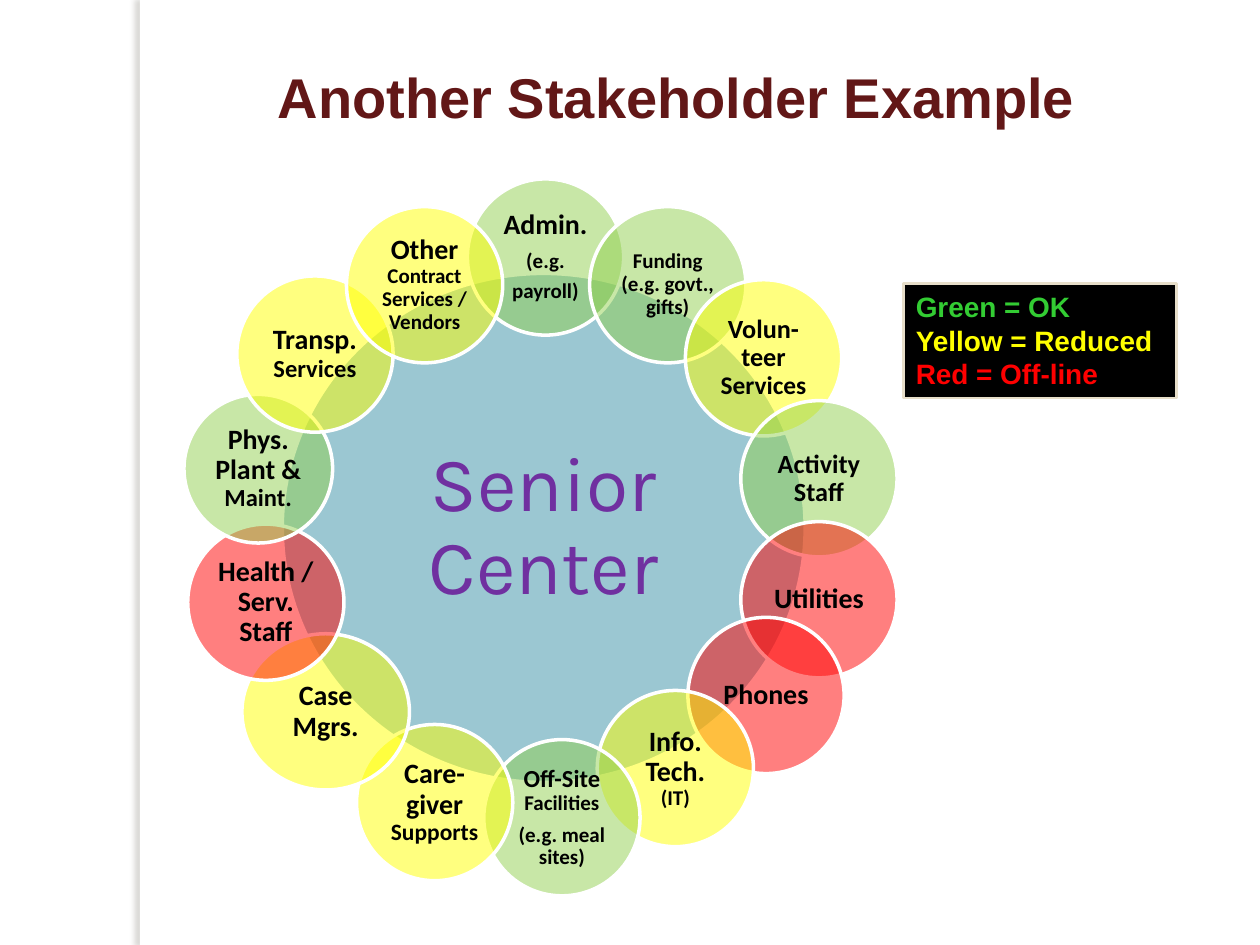
from lxml.etree import SubElement
from pptx import Presentation
from pptx.dml.color import RGBColor
from pptx.enum.shapes import MSO_SHAPE
from pptx.enum.text import MSO_ANCHOR, PP_ALIGN
from pptx.oxml.ns import qn
from pptx.util import Inches, Pt

CELL = Inches(0.1)  # the page is a grid of 100 columns by 75 rows
GREEN, YELLOW, RED = "92D050", "FFFF00", "FF0000"
BREAK = ("\v", 0)


def color(value):
    return RGBColor.from_string(value)


def add_box(kind, left, top, width, height, fill, line=None, line_width=2, opacity=100):
    box = page.shapes.add_shape(kind, *(round(n * CELL) for n in (left, top, width, height)))
    box.shadow.inherit = False
    box.fill.solid()
    box.fill.fore_color.rgb = color(fill)
    if opacity < 100:
        tint = box.fill._xPr.find(qn("a:solidFill"))[0]
        SubElement(tint, qn("a:alpha"), val=str(opacity * 1000))
    if line:
        box.line.color.rgb = color(line)
        box.line.width = Pt(line_width)
    else:
        box.line.fill.background()
    box.text_frame.word_wrap = True
    return box


deck = Presentation()
deck.slide_width, deck.slide_height = 100 * CELL, 75 * CELL
page = deck.slides.add_slide(deck.slide_layouts[6])

# Side strip with a soft shadow to its left
strip = add_box(MSO_SHAPE.RECTANGLE, 11.1, 0, 0.8, 75, "FFFFFF")
effects = strip._element.spPr.find(qn("a:effectLst"))
shadow = SubElement(effects, qn("a:outerShdw"), blurRad=str(Pt(3)), dist=str(Pt(3)),
                    dir=str(180 * 60000), algn="tl", rotWithShape="0")
shade = SubElement(shadow, qn("a:srgbClr"), val="736F63")
SubElement(shade, qn("a:alpha"), val="25000")

# Title
title = page.shapes.add_textbox(round(5.8 * CELL), 5 * CELL, round(95.8 * CELL), 10 * CELL)
frame = title.text_frame
frame.word_wrap = True
frame.vertical_anchor = MSO_ANCHOR.TOP
frame.margin_top = 0
frame.text = "Another Stakeholder Example"
para = frame.paragraphs[0]
para.alignment = PP_ALIGN.CENTER
font = para.runs[0].font
font.name, font.size, font.bold = "Arial", Pt(32), True
font.color.rgb = color("621717")

# Circles: centre column, centre row, width, height, fill, inset,
# then paragraphs of (text, size) spans
circles = [
    (43.15, 41.9, 41.5, 40.4, "3891A7", 0.6, [[("Senior Center", 44)]]),
    (43.3, 20.4, 12.4, 12.4, GREEN, 0.2, [[("Admin.", 16)], [("(e.g.", 12)], [("payroll)", 12)]]),
    (53, 22.6, 12.4, 12.4, GREEN, 0.2, [[("Funding (e.g. govt., gifts)", 12)]]),
    (60.6, 28.4, 12.4, 12.4, YELLOW, 0.2,
     [[("Volun-", 15), BREAK, ("teer ", 15), ("Services", 14.5)]]),
    (65, 38, 12.4, 12.4, GREEN, 0.2, [[("Activity Staff", 15)]]),
    (65, 47.6, 12.4, 12.4, RED, 0.2, [[("Utilities", 16)]]),
    (60.8, 55.2, 12.4, 12.4, RED, 0.2, [[("Phones", 16)]]),
    (53.6, 61, 12.4, 12.4, YELLOW, 0.2, [[("Info. Tech.", 16), BREAK, ("(IT)", 12)]]),
    (44.6, 64.9, 12.4, 12.4, GREEN, 0.2,
     [[("Off-Site ", 14), ("Facilities", 12)], [("(e.g. meal sites)", 12)]]),
    (34.5, 63.7, 12.4, 12.4, YELLOW, 0.2, [[("Care-giver ", 16), ("Supports", 13.4)]]),
    (25.85, 56.5, 13.3, 12.4, YELLOW, 0.2, [[("Case Mgrs.", 16)]]),
    (21.1, 47.8, 12.4, 12.4, RED, 0.2, [[("Health / Serv. Staff", 16)]]),
    (20.5, 37.2, 11.8, 11.8, GREEN, 0.2, [[("Phys. Plant & ", 16), ("Maint.", 14)]]),
    (25, 28.1, 12.4, 12.4, YELLOW, 0.2, [[("Transp.", 16), BREAK, ("Services", 14)]]),
    (33.7, 22.6, 12.4, 12.4, YELLOW, 0.2,
     [[("Other ", 16), ("Contract Services / Vendors", 12)]]),
]
for column, row, width, height, fill, inset, paragraphs in circles:
    hub = fill == "3891A7"
    circle = add_box(MSO_SHAPE.OVAL, column - width / 2, row - height / 2, width, height,
                     fill, "FFFFFF", opacity=50)
    frame = circle.text_frame
    frame.vertical_anchor = MSO_ANCHOR.MIDDLE
    frame.margin_left = frame.margin_right = round(inset * CELL)
    frame.margin_top = frame.margin_bottom = round(inset * CELL)
    for index, spans in enumerate(paragraphs):
        para = frame.add_paragraph() if index else frame.paragraphs[0]
        para.alignment = PP_ALIGN.CENTER
        para.line_spacing = 0.9
        para.space_after = Pt(0.35 * spans[0][1])
        for words, size in spans:
            if words == "\v":
                para.add_line_break()
                continue
            span = para.add_run()
            span.text = words
            span.font.name = "Karla" if hub else "Calibri"
            span.font.size = Pt(size)
            span.font.bold = not hub
            span.font.color.rgb = color("7030A0" if hub else "000000")

# Legend
legend = add_box(MSO_SHAPE.RECTANGLE, 71.7, 22.5, 21.7, 9.1, "000000", "E7DEC9", 1.5)
legend_lines = {"Green = OK": "33CC33", "Yellow = Reduced": "FFFF00", "Red = Off-line": "FF0000"}
frame = legend.text_frame
frame.vertical_anchor = MSO_ANCHOR.TOP
frame.text = "\n".join(legend_lines)
for para, tone in zip(frame.paragraphs, legend_lines.values()):
    para.alignment = PP_ALIGN.LEFT
    font = para.runs[0].font
    font.name, font.size, font.bold = "Arial", Pt(16), True
    font.color.rgb = color(tone)

deck.save("out.pptx")
